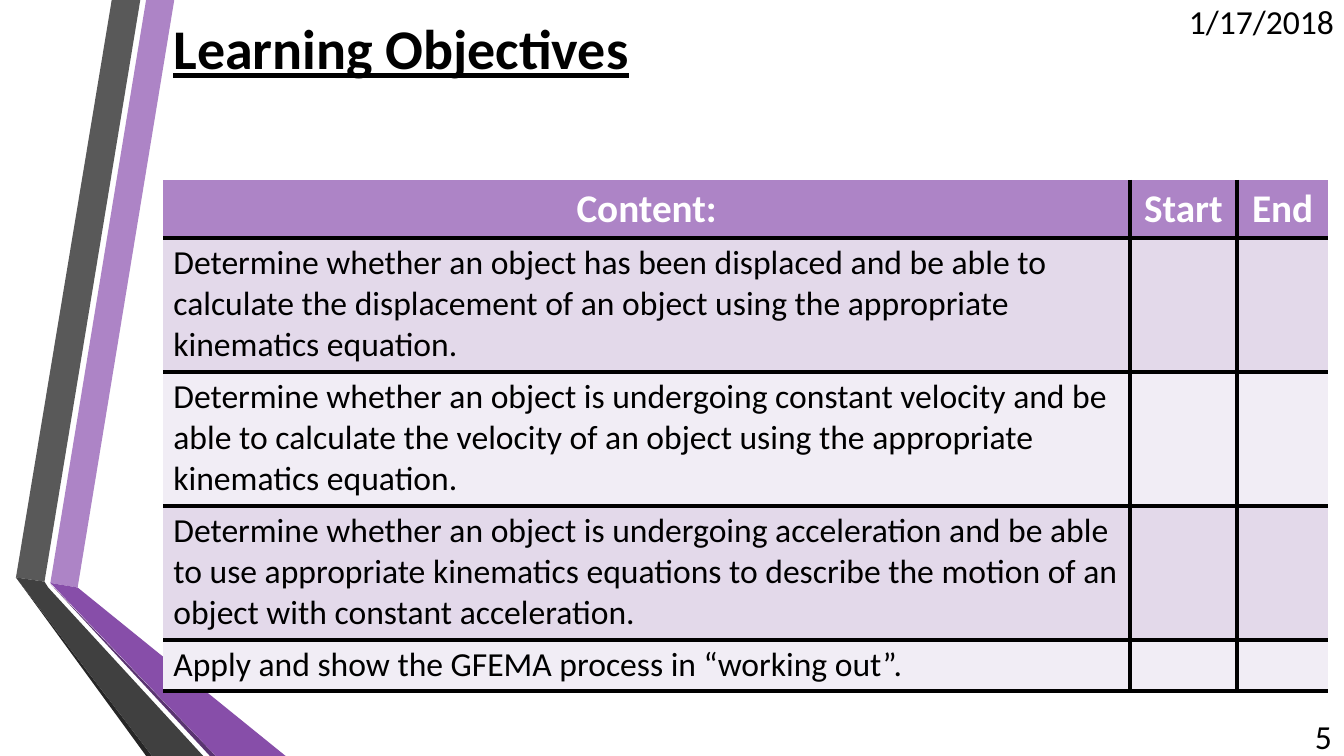
from dataclasses import dataclass
from pptx import Presentation
from pptx import util as u
from pptx.dml import color
from pptx.enum import text
from pptx.oxml import ns, xmlchemy
from pptx.slide import Slide
from pptx.table import _Cell as Cell
from pptx.text.text import TextFrame

GRID_COLUMNS, GRID_ROWS = 160, 90
ALIGN = text.PP_ALIGN
MIDDLE, TOP = text.MSO_ANCHOR.MIDDLE, text.MSO_ANCHOR.TOP


@dataclass(frozen=True)
class Theme:
    font: str = "Calibri"
    ink: str = "000000"
    paper: str = "FFFFFF"
    lilac: str = "AD84C6"
    purple: str = "874EA9"
    plum: str = "5A3471"
    grey: str = "595959"
    charcoal: str = "404040"
    coal: str = "262626"
    bands: tuple[str, str] = ("E3D9EA", "F1EDF5")
    title_size: int = 40
    header_size: int = 28
    body_size: int = 24
    rule_width: int = 3


@dataclass(frozen=True)
class Ribbon:
    fill: str
    points: tuple[tuple[float, float], ...]


@dataclass(frozen=True)
class Area:
    column: float
    row: float
    columns: float
    rows: float


@dataclass(frozen=True)
class Label:
    words: str
    area: Area


THEME = Theme()
RIBBONS = (
    Ribbon(THEME.lilac, ((6, 69.4), (9.25, 69.95), (20.75, 0), (17.4, 0))),
    Ribbon(THEME.grey, ((16.7, 0), (13.3, 0), (1.9, 68.75), (5.3, 69.25))),
    Ribbon(THEME.coal, ((1.9, 68.75), (17.4, 90), (18.1, 90))),
    Ribbon(THEME.plum, ((6, 69.5), (25, 90), (25.7, 90))),
    Ribbon(THEME.purple, ((6, 69.4), (25.7, 90), (34, 90), (9.25, 69.95))),
    Ribbon(THEME.charcoal, ((24.2, 90), (5.75, 69.95), (5.3, 69.25), (1.9, 68.75), (18.1, 90))),
)
TITLE = Label("Learning Objectives", Area(19.44, 0.12, 131.5, 11.04))
CORNER_LABELS = (
    Label("1/17/2018", Area(136.2, 0.12, 23.8, 4.8)),
    Label("5", Area(151, 85.2, 8.75, 4.8)),
)
HEADINGS = ("Content:", "Start", "End")
OBJECTIVES = (
    "Determine whether an object has been displaced and be able to calculate the "
    "displacement of an object using the appropriate kinematics equation.",
    "Determine whether an object is undergoing constant velocity and be able to calculate "
    "the velocity of an object using the appropriate kinematics equation.",
    "Determine whether an object is undergoing acceleration and be able to use appropriate "
    "kinematics equations to describe the motion of an object with constant acceleration.",
    "Apply and show the GFEMA process in “working out”.",
)
TABLE_COLUMNS = (115.08, 12.72, 10.92)
TABLE_ROWS = (6.9, 15.96, 15.96, 15.96, 6.06)
TABLE_AREA = Area(19.44, 21.4, sum(TABLE_COLUMNS), sum(TABLE_ROWS))


def grid(cells: float) -> u.Length:
    return u.Pt(6 * cells)


def place(area: Area) -> tuple[u.Length, ...]:
    return grid(area.column), grid(area.row), grid(area.columns), grid(area.rows)


def write(frame: TextFrame, words: str, size: int, ink: str = THEME.ink,
          align: ALIGN = ALIGN.LEFT, bold: bool = False, underline: bool = False) -> None:
    para = frame.paragraphs[0]
    para.alignment = align
    span = para.add_run()
    span.text = words
    span.font.name = THEME.font
    span.font.size = u.Pt(size)
    span.font.bold = bold
    span.font.underline = underline
    span.font.color.rgb = color.RGBColor.from_string(ink)


def draw_ribbon(page: Slide, ribbon: Ribbon) -> None:
    points = [(grid(x), grid(y)) for x, y in ribbon.points]
    outline = page.shapes.build_freeform(*points[0])
    outline.add_line_segments(points[1:], close=True)
    shape = outline.convert_to_shape()
    shape.shadow.inherit = False
    shape.fill.solid()
    shape.fill.fore_color.rgb = color.RGBColor.from_string(ribbon.fill)
    shape.line.fill.background()


def draw_title(page: Slide) -> None:
    box = page.shapes.title
    box.left, box.top, box.width, box.height = place(TITLE.area)
    frame = box.text_frame
    frame.auto_size = text.MSO_AUTO_SIZE.NONE
    frame.vertical_anchor = MIDDLE
    write(frame, TITLE.words, THEME.title_size, bold=True, underline=True)


def draw_corner_label(page: Slide, label: Label) -> None:
    frame = page.shapes.add_textbox(*place(label.area)).text_frame
    frame.word_wrap = True
    frame.vertical_anchor = MIDDLE
    write(frame, label.words, THEME.body_size, align=ALIGN.RIGHT)


def rule_cell(cell: Cell, ruled: dict[str, bool]) -> None:
    """Draw the ruled sides and clear the others; sides come in the order L, R, T, B."""
    properties = cell._tc.get_or_add_tcPr()
    for side, visible in ruled.items():
        line = xmlchemy.OxmlElement(f"a:ln{side}")
        line.set("w", str(u.Pt(THEME.rule_width)))
        fill = xmlchemy.OxmlElement("a:solidFill" if visible else "a:noFill")
        if visible:
            ink = fill.makeelement(ns.qn("a:srgbClr"), {"val": THEME.ink})
            fill.append(ink)
        line.append(fill)
        properties.append(line)


def draw_objectives(page: Slide) -> None:
    rows = [HEADINGS, *((objective, "", "") for objective in OBJECTIVES)]
    table = page.shapes.add_table(len(rows), len(HEADINGS), *place(TABLE_AREA)).table
    for column, width in zip(table.columns, TABLE_COLUMNS):
        column.width = grid(width)
    for i, (words_in_row, height) in enumerate(zip(rows, TABLE_ROWS)):
        table.rows[i].height = grid(height)
        heading = i == 0
        for j, words in enumerate(words_in_row):
            cell = table.cell(i, j)
            rule_cell(cell, {"L": j > 0, "R": j < len(HEADINGS) - 1, "T": not heading, "B": True})
            cell.fill.solid()
            fill = THEME.lilac if heading else THEME.bands[(i - 1) % 2]
            cell.fill.fore_color.rgb = color.RGBColor.from_string(fill)
            cell.vertical_anchor = MIDDLE if heading else TOP
            if heading:
                write(cell.text_frame, words, THEME.header_size, THEME.paper, ALIGN.CENTER, bold=True)
            elif words:
                write(cell.text_frame, words, THEME.body_size)


def main() -> None:
    deck = Presentation()
    deck.slide_width, deck.slide_height = grid(GRID_COLUMNS), grid(GRID_ROWS)
    page = deck.slides.add_slide(deck.slide_layouts.get_by_name("Title Only"))
    for ribbon in RIBBONS:
        draw_ribbon(page, ribbon)
    draw_title(page)
    for label in CORNER_LABELS:
        draw_corner_label(page, label)
    draw_objectives(page)
    deck.save("out.pptx")


if __name__ == "__main__":
    main()
